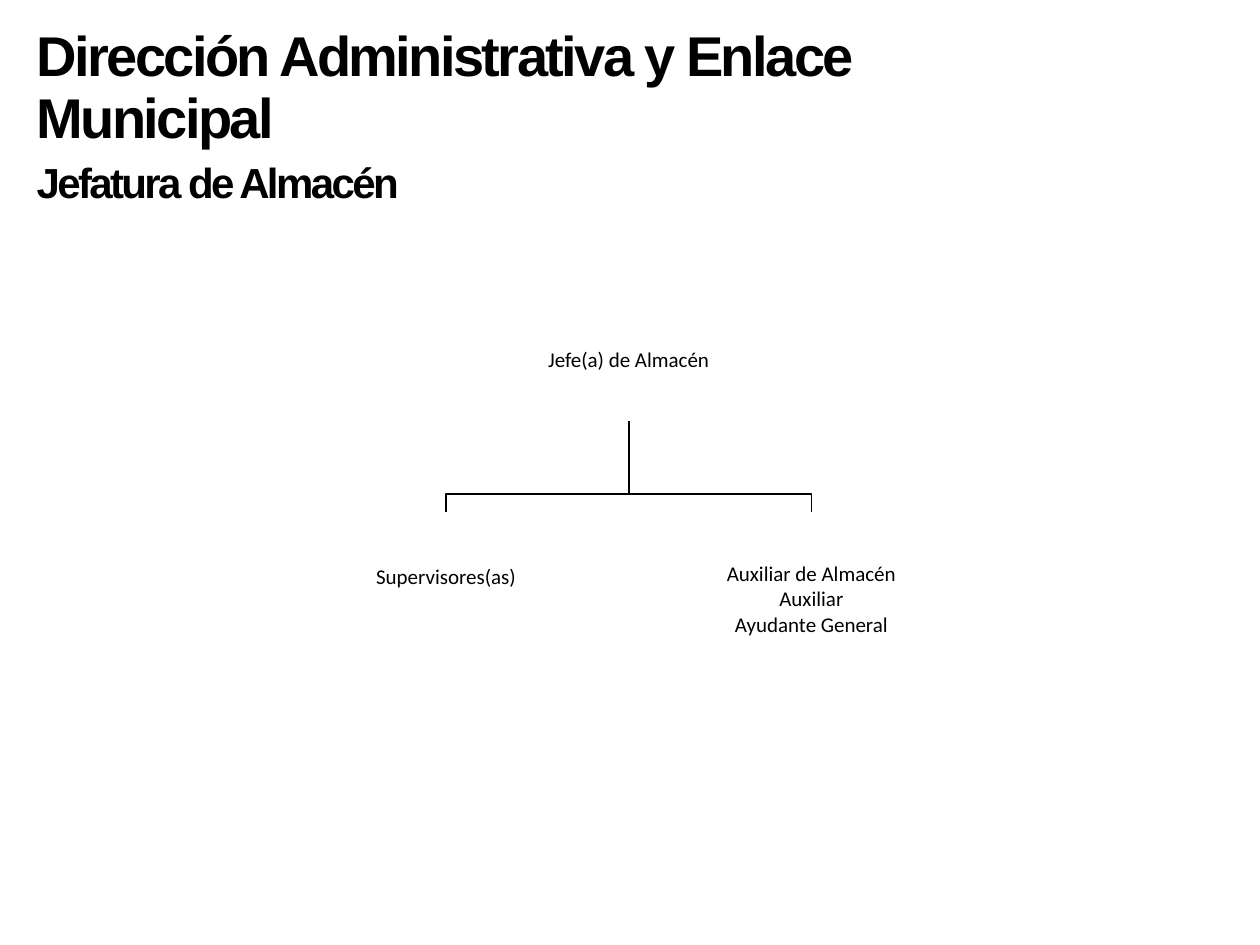
import pptx
import pptx.util
import pptx.dml.color
import pptx.enum.shapes
import pptx.enum.text

Inches, Pt = pptx.util.Inches, pptx.util.Pt
ALIGN, ANCHOR = pptx.enum.text.PP_ALIGN, pptx.enum.text.MSO_ANCHOR

BLACK = pptx.dml.color.RGBColor(0x00, 0x00, 0x00)
WHITE = pptx.dml.color.RGBColor(0xFF, 0xFF, 0xFF)

DEPARTMENT = "Dirección Administrativa y Enlace Municipal"
OFFICE = "Jefatura de Almacén"
CHIEF = ["Jefe(a) de Almacén"]
# Staff lines, side of the trunk (-1 left, 1 right), box height
TEAMS = [
    (["Supervisores(as)"], -1, 1.03),
    (["Auxiliar de Almacén", "Auxiliar", "Ayudante General"], 1, 1.38),
]

SLIDE_W, SLIDE_H = 10, 7.5
TRUNK_X = 4.99
BRANCH = 1.45
CHIEF_TOP, CHIEF_W, CHIEF_H = 2.36, 2.87, 0.98
TEAM_W = 2.6
TRUNK_TOP = CHIEF_TOP + CHIEF_H
BAR_Y = 3.92
TEAM_TOP = 4.06


def write(paragraph, text, size=12, font="Calibri", bold=False,
          align=ALIGN.CENTER, line_spacing=1.0, before=None, tracking=None):
    """Fill one paragraph; tracking is letter spacing in points."""
    paragraph.alignment = align
    paragraph.line_spacing = line_spacing
    if before is not None:
        paragraph.space_before = Pt(before)
    run = paragraph.add_run()
    run.text = text
    run.font.size = Pt(size)
    run.font.name = font
    run.font.bold = bold
    run.font.color.rgb = BLACK
    if tracking is not None:
        run.font._element.set("spc", str(round(tracking * 100)))


def add_post(slide, lines, center_x, top, width, height):
    post = slide.shapes.add_shape(
        pptx.enum.shapes.MSO_SHAPE.RECTANGLE, Inches(center_x - width / 2),
        Inches(top), Inches(width), Inches(height))
    post.shadow.inherit = False
    post.fill.solid()
    post.fill.fore_color.rgb = WHITE
    post.line.fill.background()
    frame = post.text_frame
    frame.word_wrap = True
    frame.vertical_anchor = ANCHOR.MIDDLE
    frame.margin_left = frame.margin_right = Inches(0.01)
    frame.margin_top = frame.margin_bottom = Inches(0.01)
    for i, line in enumerate(lines):
        write(frame.add_paragraph() if i else frame.paragraphs[0], line)


def add_branch(slide, end_x):
    builder = slide.shapes.build_freeform(
        Inches(TRUNK_X), Inches(TRUNK_TOP))
    corners = [(TRUNK_X, BAR_Y), (end_x, BAR_Y), (end_x, TEAM_TOP)]
    builder.add_line_segments(
        [(Inches(x), Inches(y)) for x, y in corners], close=False)
    branch = builder.convert_to_shape()
    branch.shadow.inherit = False
    branch.fill.background()
    branch.line.color.rgb = BLACK
    branch.line.width = Pt(1)


def add_heading(slide):
    title = slide.shapes.title
    title.left, title.top = Inches(0.19), Inches(0.16)
    title.width, title.height = Inches(7.46), Inches(1.47)
    frame = title.text_frame
    frame.word_wrap = True
    frame.vertical_anchor = ANCHOR.TOP
    frame.auto_size = pptx.enum.text.MSO_AUTO_SIZE.SHAPE_TO_FIT_TEXT
    style = dict(font="Arial", bold=True, align=ALIGN.LEFT, tracking=-1.5)
    write(frame.paragraphs[0], DEPARTMENT, size=32, line_spacing=0.93, **style)
    write(frame.add_paragraph(), OFFICE, size=24, before=3, **style)


def main():
    deck = pptx.Presentation()
    deck.slide_width, deck.slide_height = Inches(SLIDE_W), Inches(SLIDE_H)
    slide = deck.slides.add_slide(deck.slide_layouts[5])
    slide.background.fill.solid()
    slide.background.fill.fore_color.rgb = WHITE
    add_heading(slide)
    add_post(slide, CHIEF, TRUNK_X, CHIEF_TOP, CHIEF_W, CHIEF_H)
    for lines, side, height in TEAMS:
        center_x = TRUNK_X + side * BRANCH
        add_post(slide, lines, center_x, TEAM_TOP, TEAM_W, height)
        add_branch(slide, center_x)
    deck.save("out.pptx")


if __name__ == "__main__":
    main()
